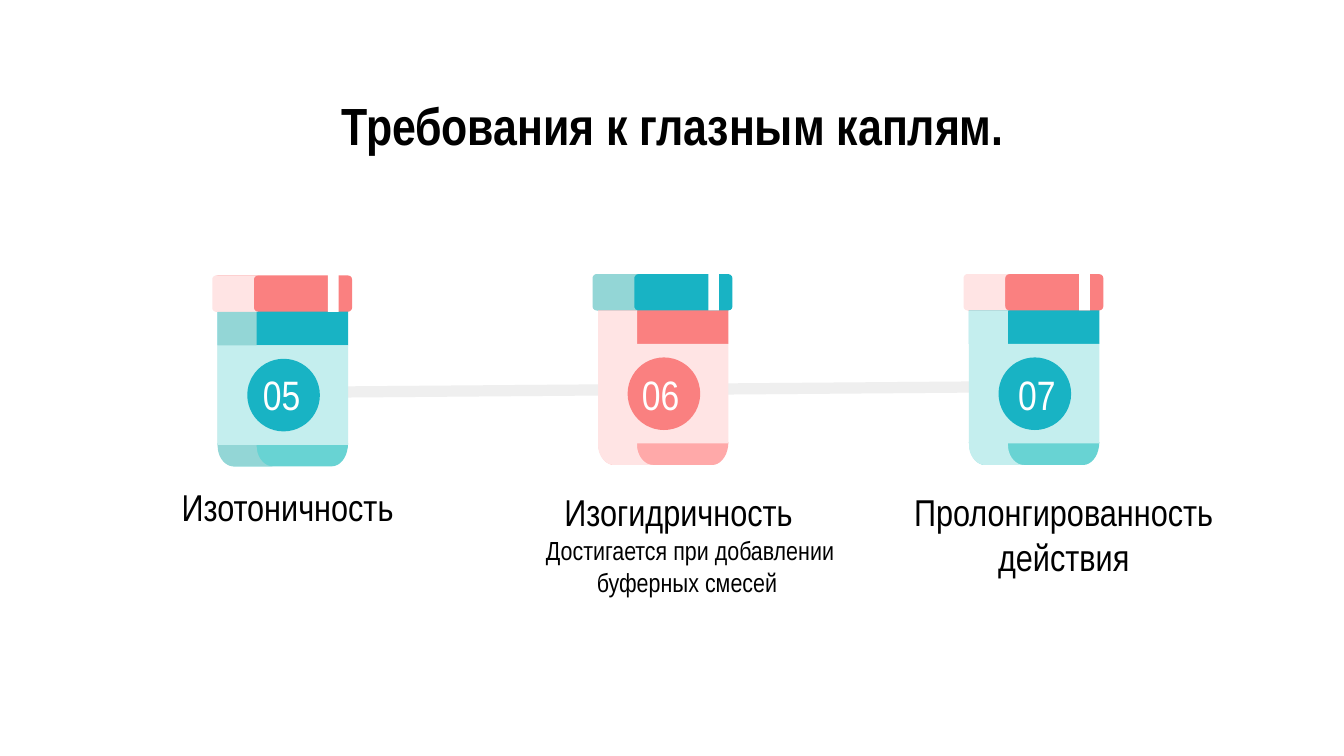
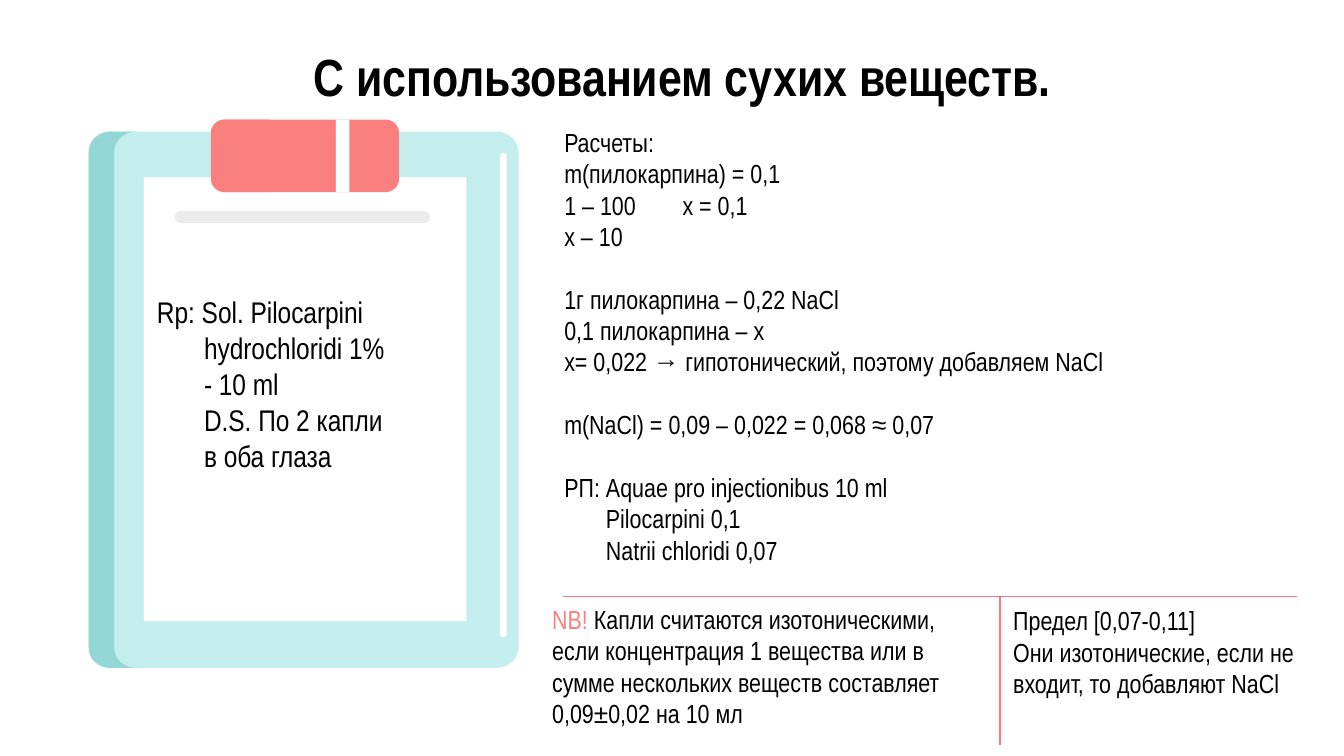
import math

from lxml import etree
from pptx import Presentation
from pptx import util as u
from pptx.dml.color import RGBColor
from pptx.enum import shapes, text
from pptx.oxml.ns import qn

FONT = "Arial Narrow"
COLORS = {
    "ink": "000000", "white": "FFFFFF", "link": "EFEFEF", "rule": "F77A7A",
    "coral": "FA8080", "salmon": "FFA9A9", "blush": "FFE4E4",
    "teal": "18B3C4", "aqua": "68D3D3", "mist": "C4EEEE", "sage": "93D6D6",
}
CENTER, LEFT = text.PP_ALIGN.CENTER, text.PP_ALIGN.LEFT
TOP, MIDDLE = text.MSO_ANCHOR.TOP, text.MSO_ANCHOR.MIDDLE
RECT = shapes.MSO_SHAPE.RECTANGLE
ROUND = shapes.MSO_SHAPE.ROUNDED_RECTANGLE
OVAL = shapes.MSO_SHAPE.OVAL
EVEN_INSETS = (0.1, 0.1, 0.1, 0.1)
NOTE_INSETS = (0.1, 0.05, 0.1, 0.05)


def rgb(name):
    return RGBColor.from_string(COLORS[name])


def apply(obj, values):
    for name, value in values.items():
        setattr(obj, name, value)


def paint(sp, color):
    sp.shadow.inherit = False
    sp.fill.solid()
    sp.fill.fore_color.rgb = rgb(color)
    sp.line.fill.background()
    return sp


def add_block(parent, kind, box, color, radius=None):
    sp = parent.shapes.add_shape(kind, *map(u.Inches, box))
    if radius is not None:
        sp.adjustments[0] = radius / min(box[2:])
    return paint(sp, color)


def left_side(x, y, h, rx, top, bottom):
    angles = [math.radians(step * 10) for step in range(10)]
    upper = [(x + rx * (1 - math.sin(a)), y + top * (1 - math.cos(a)))
             for a in angles] if top else [(x, y)]
    lower = [(x + rx * (1 - math.cos(a)), y + h - bottom * (1 - math.sin(a)))
             for a in angles]
    return upper + lower


def add_outline(parent, points, color):
    emu = [(u.Inches(x), u.Inches(y)) for x, y in points]
    fb = parent.shapes.build_freeform(*emu[0], scale=1.0)
    fb.add_line_segments(emu[1:], close=True)
    paint(fb.convert_to_shape(), color)


def add_shade(parent, x, y, shift, h, rx, top, bottom, color):
    edge = left_side(x, y, h, rx, top, bottom)
    far = [(px + shift, py) for px, py in reversed(edge)]
    add_outline(parent, edge + far, color)


def add_rule(slide, start, end, color, width):
    ln = slide.shapes.add_connector(
        shapes.MSO_CONNECTOR.STRAIGHT, *map(u.Inches, start + end))
    ln.line.color.rgb = rgb(color)
    ln.line.width = u.Pt(width)
    etree.SubElement(ln._element.spPr, qn("a:effectLst"))


def write(sp, lines, size, align=LEFT, anchor=TOP, insets=EVEN_INSETS,
          color="ink", bold=False):
    tf = sp.text_frame
    apply(tf, {"word_wrap": True, "vertical_anchor": anchor,
               "auto_size": text.MSO_AUTO_SIZE.NONE})
    sides = ("left", "top", "right", "bottom")
    apply(tf, {f"margin_{s}": u.Inches(v) for s, v in zip(sides, insets)})
    for i, line in enumerate(lines):
        line = {"runs": [(line, color)]} if isinstance(line, str) else line
        p = tf.paragraphs[0] if i == 0 else tf.add_paragraph()
        pPr = p._p.get_or_add_pPr()
        if "indent" in line:
            pPr.set("marL", str(u.Inches(line["indent"])))
        if "tab" in line:
            tabs = etree.SubElement(pPr, qn("a:tabLst"))
            etree.SubElement(tabs, qn("a:tab"),
                             pos=str(u.Inches(line["tab"])), algn="l")
        apply(p, {"alignment": align, "space_before": u.Pt(line.get("gap", 0))})
        for words, tone in line["runs"]:
            r = p.add_run()
            r.text = words
            apply(r.font, {"name": FONT, "size": u.Pt(size), "bold": bold})
            r.font.color.rgb = rgb(tone)


def row(words, **layout):
    return {"runs": [(words, "ink")], **layout}


def add_text(slide, box, lines, size, **style):
    write(slide.shapes.add_textbox(*map(u.Inches, box)), lines, size, **style)


def add_title_slide(prs, title, x, y):
    slide = prs.slides.add_slide(prs.slide_layouts[5])
    sp = slide.shapes.title
    apply(sp, dict(zip(("left", "top", "width", "height"),
                       map(u.Inches, (x, y, 8.43, 0.55)))))
    write(sp, [title], 28, align=CENTER, bold=True)
    return slide


def add_jar(slide, x, y, tones):
    g = slide.shapes.add_group_shape()
    left = left_side(x, y + 1.25, 0.17, 0.12, 0, 0.17)
    right = [(2 * x + 0.97 - px, py) for px, py in reversed(left)]
    add_outline(g, left + right, tones["base"])
    add_block(g, RECT, (x, y + 0.25, 0.97, 0.27), tones["neck"])
    add_block(g, ROUND, (x - 0.03, y, 1.03, 0.27), tones["cap"], 0.03)
    add_shade(g, x - 0.04, y, 0.31, 0.27, 0.03, 0.03, 0.03, tones["cap_shade"])
    add_shade(g, x, y + 0.27, 0.29, 1.15, 0.12, 0, 0.15, tones["shade"])
    add_block(g, RECT, (x, y + 0.52, 0.97, 0.74), tones["label"])
    add_block(g, RECT, (x + 0.82, y - 0.01, 0.08, 0.28), "white")
    add_block(g, OVAL, (x + 0.22, y + 0.62, 0.54, 0.54), tones["neck"])


def build_requirements(prs):
    slide = add_title_slide(prs, "Требования к глазным каплям.", 0.79, 0.59)
    add_rule(slide, (2.14, 2.92), (7.21, 2.88), "link", 6)
    teal_jar = {"base": "aqua", "neck": "teal", "cap": "coral",
                "cap_shade": "blush", "shade": "mist", "label": "mist"}
    coral_jar = {"base": "salmon", "neck": "coral", "cap": "teal",
                 "cap_shade": "sage", "shade": "blush", "label": "blush"}
    jars = [
        ("05", 1.62, 2.05, {**teal_jar, "shade": "sage"}, (1.84, 0.51),
         (1.12, 3.5, 2.04, 0.4), ["Изотоничность"]),
        ("06", 4.45, 2.04, coral_jar, (4.64, 0.55),
         (4.03, 3.54, 2.04, 0.4), ["Изогидричность"]),
        ("07", 7.21, 2.04, teal_jar, (7.46, 0.51),
         (6.61, 3.54, 2.61, 0.4), ["Пролонгированность", "действия"]),
    ]
    for number, x, y, tones, (num_x, num_w), caption_box, caption in jars:
        add_jar(slide, x, y, tones)
        add_text(slide, (num_x, 2.66, num_w, 0.54), [number], 22,
                 align=CENTER, anchor=MIDDLE, color="white")
        add_text(slide, caption_box, caption, 20, align=CENTER)
    add_text(slide, (3.83, 3.88, 2.61, 0.57),
             ["Достигается при добавлении буферных смесей "], 14, align=CENTER)


def add_clipboard(slide, x, y, lines):
    g = slide.shapes.add_group_shape()
    add_block(g, ROUND, (x, y, 3.2, 3.99), "mist", 0.16)
    add_shade(g, x, y, 0.19, 3.99, 0.16, 0.15, 0.15, "sage")
    paper = add_block(g, RECT, (x + 0.41, y + 0.34, 2.4, 3.3), "white")
    write(paper, lines, 16, anchor=MIDDLE, insets=(0.1, 0.1, 0.1, 0.33))
    add_block(g, ROUND, (x + 0.91, y - 0.09, 1.4, 0.54), "coral", 0.1)
    add_shade(g, x + 0.91, y - 0.09, 0.34, 0.54, 0.11, 0.1, 0.1, "coral")
    add_block(g, RECT, (x + 1.84, y - 0.09, 0.1, 0.54), "white")
    add_block(g, ROUND, (x + 3.06, y + 0.16, 0.05, 3.6), "white", 0.02)
    bar = add_block(g, ROUND, (x + 0.64, y + 0.59, 1.9, 0.09), "ink", 0.045)
    tone = bar._element.spPr.find(qn("a:solidFill"))[0]
    etree.SubElement(tone, qn("a:alpha"), val="8000")


def build_dry_substances(prs):
    slide = add_title_slide(prs, "С использованием сухих веществ.", 0.86, 0.23)
    recipe = ["hydrochloridi 1%", "- 10 ml", "D.S. По 2 капли", "в оба глаза"]
    add_clipboard(slide, 0.66, 0.98, ["Rp: Sol. Pilocarpini"]
                  + [row(words, indent=0.35) for words in recipe])
    blank = 16.8
    add_text(slide, (4.1, 0.89, 5.49, 3.87), [
        "Расчеты:",
        "m(пилокарпина) = 0,1",
        row("1 – 100\tх = 0,1", tab=0.88),
        "х – 10",
        row("1г пилокарпина – 0,22 NaCl", gap=blank),
        "0,1 пилокарпина – х",
        "х= 0,022 → гипотонический, поэтому добавляем NaCl",
        row("m(NaCl) = 0,09 – 0,022 = 0,068 ≈ 0,07", gap=blank),
        row("РП: Aquae pro injectionibus 10 ml", gap=blank),
        row("Pilocarpini 0,1", indent=0.31),
        row("Natrii chloridi 0,07", indent=0.31),
    ], 14, insets=NOTE_INSETS)
    add_text(slide, (4.01, 4.44, 3.42, 1.04), [{"runs": [
        ("NB! ", "coral"),
        ("Капли считаются изотоническими, если концентрация 1 вещества или "
         "в сумме нескольких веществ составляет 0,09±0,02 на 10 мл", "ink"),
    ]}], 14, insets=NOTE_INSETS)
    add_rule(slide, (4.19, 4.44), (9.65, 4.44), "rule", 0.75)
    add_text(slide, (7.44, 4.45, 2.46, 1.04), [
        "Предел [0,07-0,11]",
        "Они изотонические, если не входит, то добавляют NaCl",
    ], 14, insets=NOTE_INSETS)
    add_rule(slide, (7.44, 4.44), (7.44, 5.54), "rule", 0.75)


def main():
    prs = Presentation()
    width = u.Inches(10)
    apply(prs, {"slide_width": width, "slide_height": width * 9 // 16})
    build_requirements(prs)
    build_dry_substances(prs)
    prs.save("out.pptx")


if __name__ == "__main__":
    main()
